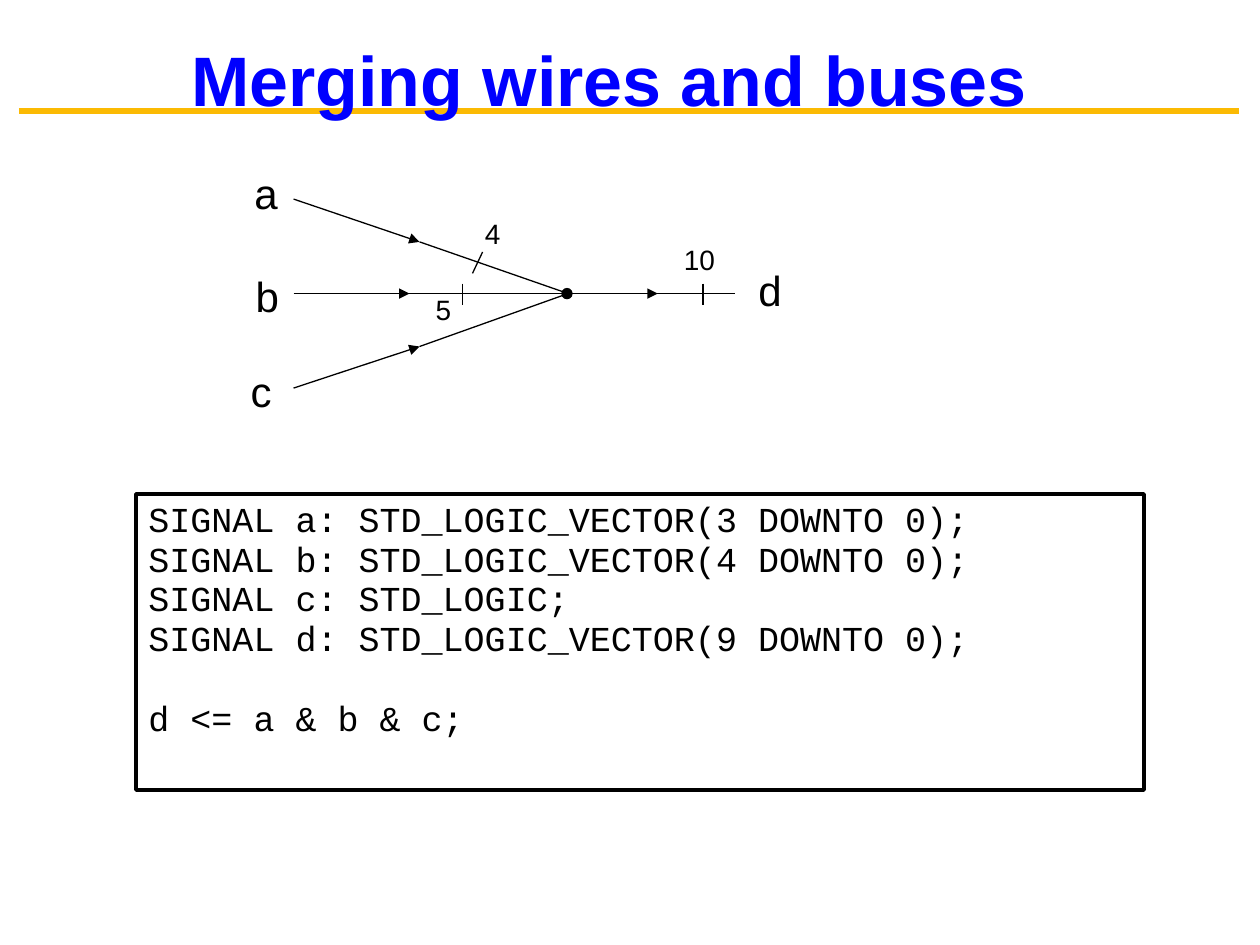
import dataclasses

import pptx
import pptx.dml.color
import pptx.enum.shapes
import pptx.enum.text
import pptx.oxml.ns
import pptx.util
from lxml import etree

Inches = pptx.util.Inches
Pt = pptx.util.Pt
MSO_SHAPE = pptx.enum.shapes.MSO_SHAPE
MSO_ANCHOR = pptx.enum.text.MSO_ANCHOR
MSO_AUTO_SIZE = pptx.enum.text.MSO_AUTO_SIZE
PP_ALIGN = pptx.enum.text.PP_ALIGN
qn = pptx.oxml.ns.qn


@dataclasses.dataclass(frozen=True)
class Theme:
    """Colours, fonts and type sizes of the slide."""
    blue: str = "0000FF"
    gold: str = "FBBA03"
    black: str = "000000"
    sans: str = "Arial"
    mono: str = "Courier New"
    title: int = 40
    signal: int = 24
    code: int = 20
    width: int = 16
    wire: float = 0.75
    frame: float = 2
    rule: float = 3.75


THEME = Theme()
BUS_Y = 2.33
DECLARATIONS = [
    "SIGNAL a: STD_LOGIC_VECTOR(3 DOWNTO 0);",
    "SIGNAL b: STD_LOGIC_VECTOR(4 DOWNTO 0);",
    "SIGNAL c: STD_LOGIC;",
    "SIGNAL d: STD_LOGIC_VECTOR(9 DOWNTO 0);",
]
ASSIGNMENT = "d <= a & b & c;"
WIRES = [
    ((2.33, 1.58), (3.33, 1.92), True),
    ((2.33, BUS_Y), (3.25, BUS_Y), True),
    ((2.33, 3.08), (3.33, 2.75), True),
    ((3.33, 1.92), (4.48, 2.32), False),
    ((3.23, BUS_Y), (5.22, BUS_Y), True),
    ((3.33, 2.75), (4.48, 2.34), False),
    ((5.2, BUS_Y), (5.83, BUS_Y), False),
    ((3.83, 2), (3.75, 2.17), False),
    ((3.67, 2.25), (3.67, 2.42), False),
    ((5.58, 2.25), (5.58, 2.42), False),
]
WIDTH_LABELS = [("4", 2.75, 1.67, 1.32), ("5", 2.36, 2.27, 1.32), ("10", 4.33, 1.88, 1.45)]
SIGNAL_LABELS = [("a", 0.92, 1.28, 1.39), ("b", 0.93, 2.1, 1.39),
                 ("c", 0.89, 2.85, 1.37), ("d", 4.92, 2.05, 1.39)]


def rgb(colour):
    """Turn a hex string into a colour."""
    return pptx.dml.color.RGBColor.from_string(colour)


def add_run(p, text, size, font=THEME.sans, colour=THEME.black, bold=False):
    """Append one formatted run to a paragraph."""
    r = p.add_run()
    r.text = text
    r.font.name = font
    r.font.size = Pt(size)
    r.font.bold = bold
    r.font.color.rgb = rgb(colour)


def add_line(s, start, end, arrow=False, colour=THEME.black, weight=THEME.wire):
    """Draw a straight line, with an arrowhead at its end if asked."""
    points = [Inches(v) for v in (*start, *end)]
    line = s.shapes.add_connector(pptx.enum.shapes.MSO_CONNECTOR.STRAIGHT, *points)
    line.line.color.rgb = rgb(colour)
    line.line.width = Pt(weight)
    if arrow:
        etree.SubElement(line.line._get_or_add_ln(), qn("a:tailEnd"), type="triangle")
    etree.SubElement(line._element.spPr, qn("a:effectLst"))
    return line


def add_outlined(s, kind, box, weight, fill=None):
    """Draw a black-outlined preset shape."""
    sp = s.shapes.add_shape(kind, *[Inches(v) for v in box])
    sp.shadow.inherit = False
    if fill:
        sp.fill.solid()
        sp.fill.fore_color.rgb = rgb(fill)
    else:
        sp.fill.background()
    sp.line.color.rgb = rgb(THEME.black)
    sp.line.width = Pt(weight)
    return sp


def add_label(s, text, left, top, width, height, size):
    """Add a one-line label with a hanging indent."""
    box = [Inches(v) for v in (left, top, width, height)]
    tf = s.shapes.add_textbox(*box).text_frame
    tf.word_wrap = False
    tf.auto_size = MSO_AUTO_SIZE.SHAPE_TO_FIT_TEXT
    p = tf.paragraphs[0]
    pPr = p._p.get_or_add_pPr()
    pPr.set("marL", str(Inches(1.25)))
    pPr.set("indent", str(Inches(-0.25)))
    add_run(p, text, size)


def add_title(s, text):
    """Place and format the title placeholder."""
    sp = s.shapes.title
    sp.left, sp.top, sp.width, sp.height = [Inches(v) for v in (0.25, 0, 9.17, 1.25)]
    tf = sp.text_frame
    tf.auto_size = MSO_AUTO_SIZE.NONE
    tf.vertical_anchor = MSO_ANCHOR.MIDDLE
    p = tf.paragraphs[0]
    p.alignment = PP_ALIGN.CENTER
    add_run(p, text, THEME.title, colour=THEME.blue, bold=True)


def add_code(s):
    """Add the framed listing, with a gap before the assignment."""
    sp = add_outlined(s, MSO_SHAPE.RECTANGLE, (1.08, 3.92, 8, 2.35), THEME.frame)
    tf = sp.text_frame
    tf.word_wrap = True
    tf.vertical_anchor = MSO_ANCHOR.TOP
    for i, text in enumerate([*DECLARATIONS, ASSIGNMENT]):
        p = tf.add_paragraph() if i else tf.paragraphs[0]
        p.alignment = PP_ALIGN.LEFT
        p.line_spacing = 0.95
        add_run(p, text, THEME.code, font=THEME.mono)
    p.space_before = Pt(22.8)


def main():
    """Build and save the slide."""
    prs = pptx.Presentation()
    prs.slide_width, prs.slide_height = Inches(10), Inches(7.5)
    s = prs.slides.add_slide(prs.slide_layouts[5])
    rule = add_line(s, (0.15, 0.88), (9.83, 0.88), colour=THEME.gold, weight=THEME.rule)
    s.shapes.title._element.addprevious(rule._element)
    add_title(s, "Merging wires and buses")
    add_code(s)
    for start, end, arrow in WIRES:
        add_line(s, start, end, arrow)
    add_outlined(s, MSO_SHAPE.OVAL, (4.46, 2.29, 0.08, 0.08), THEME.wire, THEME.black)
    for text, left, top, width in WIDTH_LABELS:
        add_label(s, text, left, top, width, 0.37, THEME.width)
    for text, left, top, width in SIGNAL_LABELS:
        add_label(s, text, left, top, width, 0.5, THEME.signal)
    prs.save("out.pptx")


if __name__ == "__main__":
    main()
